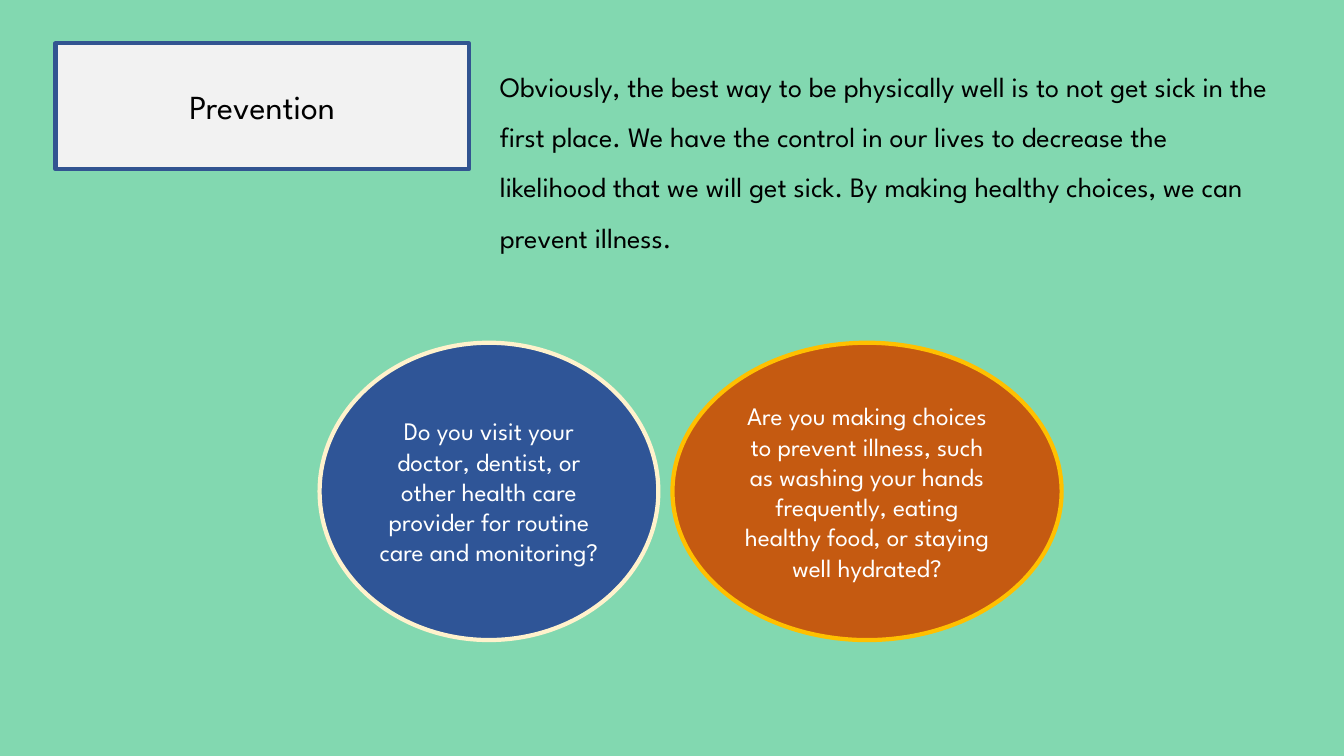
from dataclasses import dataclass

from lxml import etree
from pptx import Presentation
from pptx.dml.color import RGBColor
from pptx.enum.shapes import MSO_SHAPE
from pptx.enum.text import MSO_ANCHOR, MSO_AUTO_SIZE, PP_ALIGN
from pptx.oxml.ns import qn
from pptx.util import Inches, Pt

ELLIPSE = MSO_SHAPE.OVAL
CENTER = PP_ALIGN.CENTER
LEFT = PP_ALIGN.LEFT
TOP = MSO_ANCHOR.TOP
MIDDLE = MSO_ANCHOR.MIDDLE
NO_FIT = MSO_AUTO_SIZE.NONE
TITLE_ONLY = 5


@dataclass(frozen=True)
class Theme:
    font: str = "League Spartan"
    background: str = "82D8B0"
    ink: str = "000000"
    light_ink: str = "FFFFFF"
    title_fill: str = "F2F2F2"
    title_line: str = "325491"
    care_fill: str = "2F5597"
    care_line: str = "FFF2CC"
    choices_fill: str = "C55A11"
    choices_line: str = "FFC000"
    title_size: int = 24
    intro_size: int = 20
    question_size: int = 18
    outline: int = 3


THEME = Theme()
SLIDE_WIDTH, SLIDE_HEIGHT = 13.33, 7.5

# Regions as left, top, width, height in inches
TITLE_BOX = (0.55, 0.43, 4.1, 1.25)
INTRO_BOX = (4.86, 0.47, 7.92, 2.06)
QUESTIONS_BOX = (3.17, 3.4, 7.36, 2.95)
QUESTION_GAP = 0.14

INTRO = (
    "Obviously, the best way to be physically well is to not get sick in the "
    "first place. We have the control in our lives to decrease the likelihood "
    "that we will get sick. By making healthy choices, we can prevent illness."
)
# Text, fill, outline and share of the row's width
QUESTIONS = [
    ("Do you visit your doctor, dentist, or other health care provider for "
     "routine care and monitoring?",
     THEME.care_fill, THEME.care_line, 3.36 / 7.22),
    ("Are you making choices to prevent illness, such as washing your hands "
     "frequently, eating healthy food, or staying well hydrated?",
     THEME.choices_fill, THEME.choices_line, 3.86 / 7.22),
]


def apply(target, formats):
    for name, value in formats.items():
        setattr(target, name, value)


def write(holder, text, size, color, align=CENTER, anchor=MIDDLE, spacing=1.0):
    frame = holder.text_frame
    frame.text = text
    apply(frame, {"word_wrap": True, "auto_size": NO_FIT,
                  "vertical_anchor": anchor})
    paragraph = frame.paragraphs[0]
    apply(paragraph, {"alignment": align, "line_spacing": spacing})
    font = paragraph.runs[0].font
    apply(font, {"name": THEME.font, "size": Pt(size)})
    font.color.rgb = RGBColor.from_string(color)


def paint(shape, fill, line):
    shape.fill.solid()
    shape.fill.fore_color.rgb = RGBColor.from_string(fill)
    shape.line.color.rgb = RGBColor.from_string(line)
    shape.line.width = Pt(THEME.outline)


def add_title(slide, box):
    title = slide.shapes.title
    apply(title, dict(zip(("left", "top", "width", "height"),
                          map(Inches, box))))
    # Give the placeholder its rounded outline
    outline = etree.SubElement(title.element.spPr, qn("a:prstGeom"),
                               prst="roundRect")
    etree.SubElement(outline, qn("a:avLst"))
    paint(title, THEME.title_fill, THEME.title_line)
    write(title, "Prevention", THEME.title_size, THEME.ink)


def add_intro(slide, box):
    intro = slide.shapes.add_textbox(*map(Inches, box))
    write(intro, INTRO, THEME.intro_size, THEME.ink, LEFT, TOP, 1.5)


def add_questions(slide, box):
    left, top, width, height = box
    usable = width - QUESTION_GAP * (len(QUESTIONS) - 1)
    for text, fill, line, share in QUESTIONS:
        question_width = usable * share
        question = slide.shapes.add_shape(
            ELLIPSE, *map(Inches, (left, top, question_width, height)))
        question.shadow.inherit = False
        paint(question, fill, line)
        write(question, text, THEME.question_size, THEME.light_ink)
        left += question_width + QUESTION_GAP


def main():
    deck = Presentation()
    apply(deck, {"slide_width": Inches(SLIDE_WIDTH),
                 "slide_height": Inches(SLIDE_HEIGHT)})
    slide = deck.slides.add_slide(deck.slide_layouts[TITLE_ONLY])
    slide.background.fill.solid()
    slide.background.fill.fore_color.rgb = RGBColor.from_string(THEME.background)

    add_title(slide, TITLE_BOX)
    add_intro(slide, INTRO_BOX)
    add_questions(slide, QUESTIONS_BOX)
    deck.save("out.pptx")


if __name__ == "__main__":
    main()
